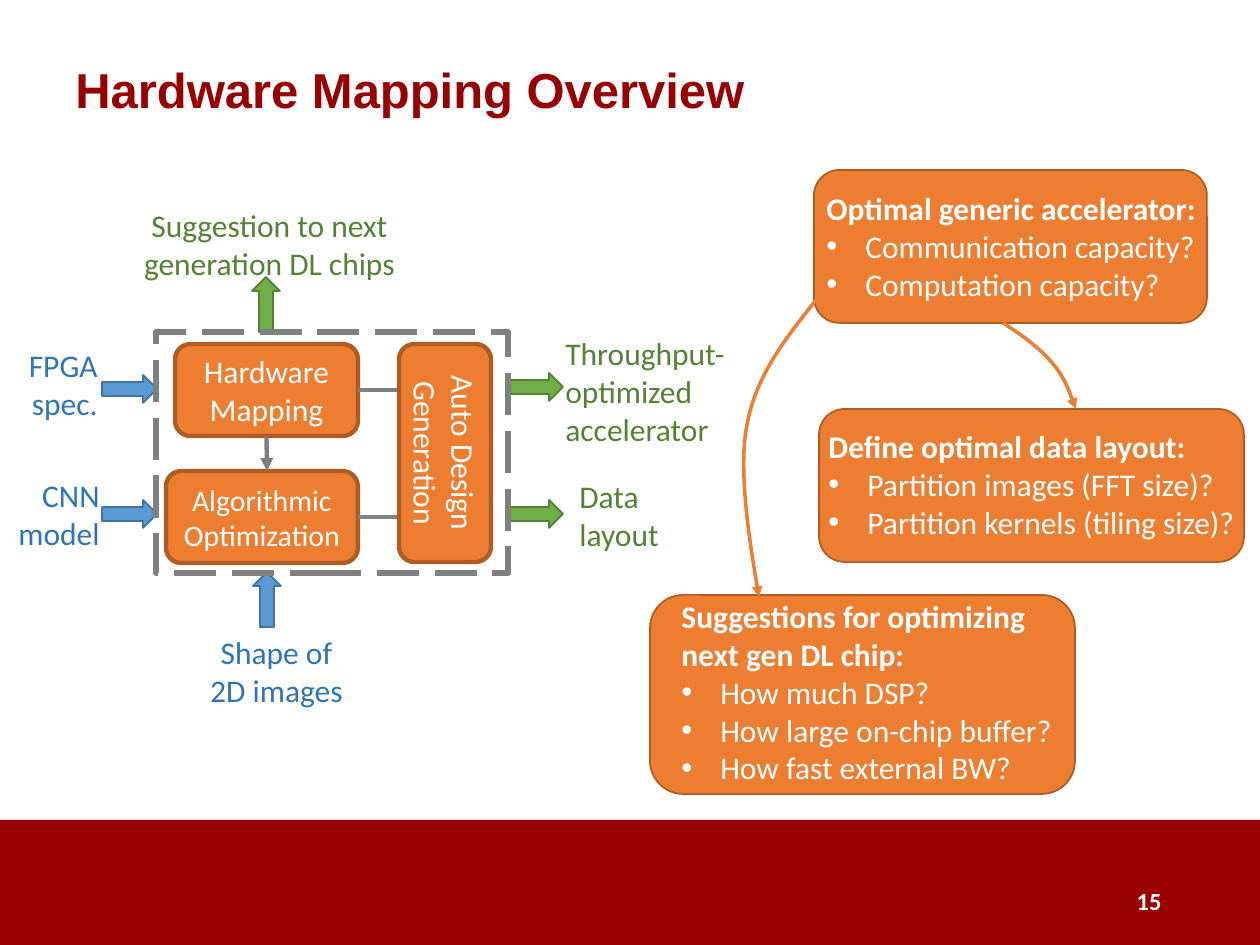
from lxml.etree import SubElement
from pptx import Presentation
from pptx.dml.color import RGBColor
from pptx.enum.dml import MSO_LINE
from pptx.enum.shapes import MSO_CONNECTOR, MSO_SHAPE
from pptx.enum.text import MSO_ANCHOR, PP_ALIGN
from pptx.oxml.ns import qn
from pptx.util import Pt

EMU_PER_PX = 914400 / 126
WHITE = RGBColor(0xFF, 0xFF, 0xFF)
RED = RGBColor(0x99, 0x00, 0x00)
GRAY = RGBColor(0x80, 0x80, 0x80)
ORANGE = RGBColor(0xED, 0x7D, 0x31)
ORANGE_EDGE = RGBColor(0xAF, 0x5C, 0x24)
BLUE = RGBColor(0x5B, 0x9B, 0xD5)
BLUE_EDGE = RGBColor(0x43, 0x73, 0x9E)
BLUE_TEXT = RGBColor(0x2E, 0x75, 0xB6)
GREEN = RGBColor(0x70, 0xAD, 0x47)
GREEN_EDGE = RGBColor(0x53, 0x80, 0x35)
GREEN_TEXT = RGBColor(0x54, 0x82, 0x35)
LEFT, CENTER, RIGHT = PP_ALIGN.LEFT, PP_ALIGN.CENTER, PP_ALIGN.RIGHT
TOP, MIDDLE = MSO_ANCHOR.TOP, MSO_ANCHOR.MIDDLE
BOTTOM_SITE, RIGHT_SITE = 2, 3


def px(*lengths):
    return [round(length * EMU_PER_PX) for length in lengths]


class Drawing:
    """Holds the slide and its text style."""

    def __init__(self, slide, font="Calibri", size=18):
        self.slide = slide
        self.shapes = slide.shapes
        self.font = font
        self.size = size

    def span(self, para, text, color, size=None, bold=False, font=None):
        span = para.add_run()
        span.text = text
        span.font.name = font or self.font
        span.font.size = Pt(size or self.size)
        span.font.bold = bold
        span.font.color.rgb = color

    def text(self, place, text, color, align=LEFT, anchor=TOP, spacing=None, **style):
        box = self.shapes.add_textbox(*px(*place))
        frame = box.text_frame
        frame.word_wrap = True
        frame.vertical_anchor = anchor
        para = frame.paragraphs[0]
        para.alignment = align
        if spacing:
            para.line_spacing = spacing
        self.span(para, text, color, **style)
        return box

    def bullet(self, frame, text, color):
        para = frame.add_paragraph()
        properties = para._p.get_or_add_pPr()
        indent, = px(39)
        properties.set("marL", str(indent))
        properties.set("indent", str(-indent))
        SubElement(properties, qn("a:buFont"), typeface="Arial")
        SubElement(properties, qn("a:buChar"), char="•")
        self.span(para, text, color)

    def shape(self, kind, place, fill=None, edge=None, width=1):
        shape = self.shapes.add_shape(kind, *px(*place))
        shape.shadow.inherit = False
        if fill is None:
            shape.fill.background()
        else:
            shape.fill.solid()
            shape.fill.fore_color.rgb = fill
        if edge is None:
            shape.line.fill.background()
        else:
            shape.line.color.rgb = edge
            shape.line.width = Pt(width)
        return shape

    def step(self, place, text, size=None, rotation=0):
        """A rounded box naming one stage of the flow."""
        box = self.shape(MSO_SHAPE.ROUNDED_RECTANGLE, place, ORANGE, ORANGE_EDGE, 2.5)
        box.rotation = rotation
        frame = box.text_frame
        frame.word_wrap = True
        frame.vertical_anchor = MIDDLE
        para = frame.paragraphs[0]
        para.alignment = CENTER
        self.span(para, text, WHITE, size)
        return box

    def card(self, place, text_place, heading, bullets):
        self.shape(MSO_SHAPE.ROUNDED_RECTANGLE, place, ORANGE, ORANGE_EDGE)
        box = self.text(text_place, heading, WHITE, bold=True)
        for item in bullets:
            self.bullet(box.text_frame, item, WHITE)

    def arrowhead(self, line):
        outline = line._element.spPr.find(qn("a:ln"))
        SubElement(outline, qn("a:tailEnd"), type="triangle")

    def line(self, start, end, box, site, arrow=False):
        """A straight line that starts at a connection site of box."""
        line = self.shapes.add_connector(MSO_CONNECTOR.STRAIGHT, *px(*start, *end))
        line.begin_connect(box, site)
        line.line.color.rgb = GRAY
        line.line.width = Pt(2.5)
        SubElement(line._element.spPr, qn("a:effectLst"))
        if arrow:
            self.arrowhead(line)

    def curve(self, start, *points):
        """A Bézier arrow; every three points after start form one segment."""
        builder = self.shapes.build_freeform(*start, scale=EMU_PER_PX)
        builder.add_line_segments(points, close=False)
        curve = builder.convert_to_shape()
        outline = curve._element.spPr.find(".//" + qn("a:path"))
        steps = outline.findall(qn("a:lnTo"))
        for first in range(0, len(steps), 3):
            segment = SubElement(outline, qn("a:cubicBezTo"))
            for step in steps[first:first + 3]:
                segment.append(step[0])
                outline.remove(step)
        curve.shadow.inherit = False
        curve.fill.background()
        curve.line.color.rgb = ORANGE
        curve.line.width = Pt(2)
        self.arrowhead(curve)


def draw_flow(drawing):
    long, thick = 55, 28
    across, up = MSO_SHAPE.RIGHT_ARROW, MSO_SHAPE.UP_ARROW
    blue, green = (BLUE, BLUE_EDGE), (GREEN, GREEN_EDGE)
    for kind, left, top, colors in (
        (across, 102, 500, blue), (across, 102, 375, blue), (up, 253, 572, blue),
        (across, 508, 500, green), (across, 508, 373, green), (up, 252, 277, green),
    ):
        size = (long, thick) if kind == across else (thick, long)
        drawing.shape(kind, (left, top, *size), *colors)

    for place, text, color, align in (
        ((-56, 470, 168, 89), "CNN model", BLUE_TEXT, RIGHT),
        ((-53, 340, 163, 89), "FPGA spec.", BLUE_TEXT, RIGHT),
        ((194, 627, 165, 89), "Shape of 2D images", BLUE_TEXT, CENTER),
        ((567, 471, 149, 89), "Data layout", GREEN_TEXT, LEFT),
        ((553, 328, 251, 127), "Throughput-optimized accelerator", GREEN_TEXT, LEFT),
        ((120, 200, 299, 89), "Suggestion to next generation DL chips", GREEN_TEXT, CENTER),
    ):
        drawing.text(place, text, color, align)

    frame = drawing.shape(MSO_SHAPE.RECTANGLE, (156, 332, 352, 241), None, GRAY, 3)
    frame.line.dash_style = MSO_LINE.LONG_DASH

    algorithm = drawing.step((166, 471, 192, 92), "Algorithmic Optimization", size=17)
    hardware = drawing.step((175, 344, 183, 92), "Hardware Mapping")
    drawing.line((358, 517), (491, 517), algorithm, RIGHT_SITE)
    drawing.line((358, 390), (491, 390), hardware, RIGHT_SITE)
    drawing.line((267, 436), (267, 471), hardware, BOTTOM_SITE, arrow=True)
    drawing.step((336, 407, 218, 92), "Auto Design Generation", rotation=90)


def draw_cards(drawing):
    drawing.card((814, 170, 393, 153), (814, 183, 398, 127),
                 "Optimal generic accelerator:",
                 ("Communication capacity?", "Computation capacity?"))
    drawing.card((819, 409, 425, 153), (816, 421, 475, 127),
                 "Define optimal data layout:",
                 ("Partition images (FFT size)?", "Partition kernels (tiling size)?"))
    drawing.card((650, 595, 425, 199), (669, 591, 421, 204),
                 "Suggestions for optimizing next gen DL chip:",
                 ("How much DSP?", "How large on-chip buffer?", "How fast external BW?"))
    drawing.curve((1003, 323), (1022, 335), (1041, 349), (1053, 364),
                  (1065, 378), (1076, 409), (1076, 409))
    drawing.curve((816, 300), (786, 338), (756, 375), (747, 425),
                  (737, 474), (759, 597), (759, 597))


def main():
    deck = Presentation()
    deck.slide_width, deck.slide_height = px(1260, 945)
    page = deck.slides.add_slide(deck.slide_layouts[6])
    drawing = Drawing(page)
    drawing.shape(MSO_SHAPE.RECTANGLE, (0, 820, 1260, 125), RED)
    drawing.text((63, 38, 1134, 110), "Hardware Mapping Overview", RED, anchor=MIDDLE,
                 spacing=0.9, size=28, bold=True, font="Arial")
    drawing.text((890, 876, 284, 50), "15", WHITE, RIGHT, MIDDLE, size=14, bold=True)
    draw_flow(drawing)
    draw_cards(drawing)
    deck.save("out.pptx")


if __name__ == "__main__":
    main()
